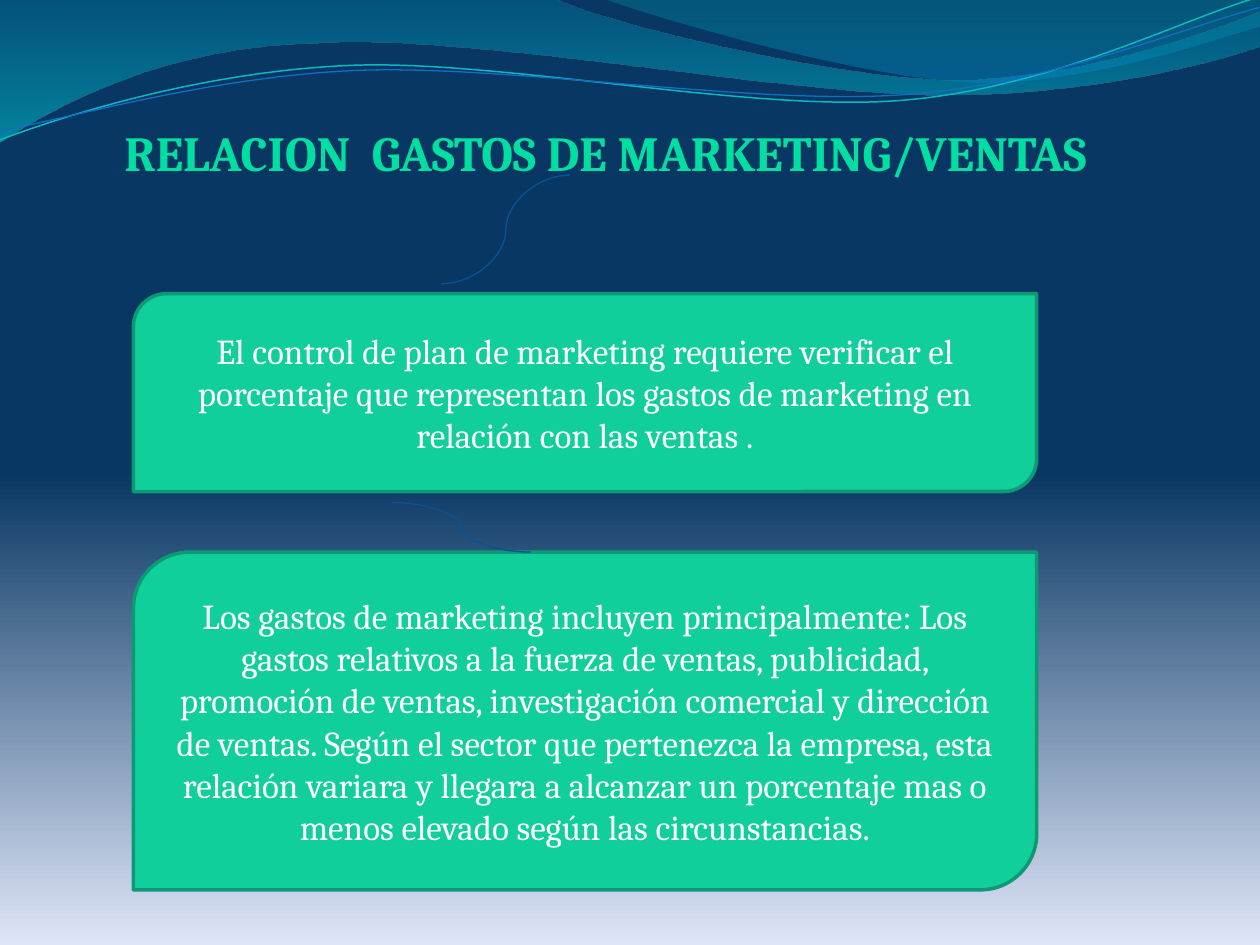
from dataclasses import dataclass

from lxml import etree
from pptx import Presentation
from pptx.dml.color import RGBColor
from pptx.enum.shapes import MSO_CONNECTOR, MSO_SHAPE
from pptx.enum.text import MSO_ANCHOR, MSO_AUTO_SIZE, PP_ALIGN
from pptx.oxml.ns import qn
from pptx.util import Cm, Pt

CURVE = MSO_CONNECTOR.CURVE
DIAGONAL_CARD = MSO_SHAPE.ROUND_2_DIAG_RECTANGLE
CENTER = PP_ALIGN.CENTER
MIDDLE = MSO_ANCHOR.MIDDLE
FIT_SHAPE = MSO_AUTO_SIZE.SHAPE_TO_FIT_TEXT


@dataclass(frozen=True)
class Theme:
    font: str = "Cambria"
    title_size: float = 28
    body_size: float = 20
    title: str = "00DFA2"
    body: str = "FFFFFF"
    card: str = "10CF9B"
    card_edge: str = "0C9973"
    link: str = "095295"
    backdrop: tuple = ((50, "083763", 100), (100, "DEE5F8", 100))
    wide_band: tuple = ((0, "0074A1", 45), (100, "00C6CF", 55))
    corner_band: tuple = ((0, "00A1A9", 30), (80, "008BBF", 45))
    upper_strand: str = "0AB8BF"
    lower_strand: str = "0F6FC6"


THEME = Theme()

WIDE_BAND = [
    [(0, 0)],
    [(11.18, -0.03)],
    [(12.09, 0.43), (16.87, 1.6), (19.25, 1.6)],
    [(21.67, 1.6), (24.33, 0.66), (25.4, 0.23)],
    [(25.43, 0.91)],
    [(24.97, 1.12), (22.1, 1.93), (18.95, 1.91)],
    [(15.8, 1.91), (9.7, 0.71), (6.53, 0.86)],
    [(3.28, 0.91), (1.17, 2.11), (-0.03, 2.87)],
]
CORNER_BAND = [
    [(12.17, -0.03)],
    [(12.93, 0.28), (17.32, 1.57), (19.53, 1.65)],
    [(21.74, 1.75), (24.41, 0.81), (25.4, 0.53)],
    [(25.4, 0)],
]
UPPER_STRAND = [
    [(0, 2.82)],
    [(1.22, 2.36), (4.01, 1.45), (7.04, 1.32)],
    [(10.03, 1.19), (15.06, 2.26), (18.11, 2.03)],
    [(21.16, 1.8), (23.83, 0.38), (25.35, -0.05)],
]
LOWER_STRAND = [
    [(0, 2.64)],
    [(1.19, 2.44), (4.17, 1.55), (7.19, 1.42)],
    [(10.24, 1.3), (15.16, 2.13), (18.21, 1.91)],
    [(21.23, 1.7), (23.9, 0.53), (25.4, 0.15)],
]

CARDS = [
    (5.92, 3.99, "El control de plan de marketing requiere verificar el porcentaje "
     "que representan los gastos de marketing en relación con las ventas ."),
    (11.13, 6.81, "Los gastos de marketing incluyen principalmente: Los gastos "
     "relativos a la fuerza de ventas, publicidad, promoción de ventas, "
     "investigación comercial y dirección de ventas. Según el sector que pertenezca "
     "la empresa, esta relación variara y llegara a alcanzar un porcentaje mas o "
     "menos elevado según las circunstancias."),
]
LINKS = [((11.5, 3.53), (8.9, 5.72)), ((7.9, 10.13), (10.7, 11.13))]


def fill_down(fill, element, stops):
    fill.gradient()
    fill.gradient_angle = 270
    for stop, (position, color, opacity) in zip(fill.gradient_stops, stops):
        stop.position = position / 100
        stop.color.rgb = RGBColor.from_string(color)
    for node, (_, _, opacity) in zip(element.iter(qn("a:srgbClr")), stops):
        if opacity < 100:
            etree.SubElement(node, qn("a:alpha"), val=str(opacity * 1000))


def set_line(line, color, width):
    line.color.rgb = RGBColor.from_string(color)
    line.width = Pt(width)


def add_outline(page, left, top, segments, close):
    points = [(Cm(left + x), Cm(top + y)) for segment in segments for x, y in segment]
    builder = page.shapes.build_freeform(*points[0], scale=1.0)
    builder.add_line_segments(points[1:], close=close)
    shape = builder.convert_to_shape()
    shape.shadow.inherit = False
    steps = iter(list(shape.element.iter(qn("a:lnTo"))))
    for segment in segments[1:]:
        first, *others = [next(steps) for _ in segment]
        if others:
            first.tag = qn("a:cubicBezTo")
            for step in others:
                first.append(step[0])
                step.getparent().remove(step)
    return shape


def add_waves(page, left, top):
    for segments, stops in ((WIDE_BAND, THEME.wide_band), (CORNER_BAND, THEME.corner_band)):
        band = add_outline(page, left, top, segments, True)
        fill_down(band.fill, band.element, stops)
        band.line.fill.background()
    for segments, color, width in (
        (UPPER_STRAND, THEME.upper_strand, 0.85),
        (LOWER_STRAND, THEME.lower_strand, 0.75),
    ):
        strand = add_outline(page, left, top, segments, False)
        strand.fill.background()
        set_line(strand.line, color, width)


def add_text(frame, text, size, color, bold=False):
    para = frame.paragraphs[0]
    para.alignment = CENTER
    span = para.add_run()
    span.text = text
    span.font.name = THEME.font
    span.font.size = Pt(size)
    span.font.bold = bold
    span.font.color.rgb = RGBColor.from_string(color)


def add_title(page, left, top, width, height):
    box = page.shapes.add_textbox(Cm(left), Cm(top), Cm(width), Cm(height))
    box.text_frame.word_wrap = False
    box.text_frame.auto_size = FIT_SHAPE
    add_text(box.text_frame, "RELACION  GASTOS DE MARKETING/VENTAS",
             THEME.title_size, THEME.title, True)


def add_card(page, left, top, width, height, text):
    card = page.shapes.add_shape(DIAGONAL_CARD, Cm(left), Cm(top), Cm(width), Cm(height))
    card.shadow.inherit = False
    card.fill.solid()
    card.fill.fore_color.rgb = RGBColor.from_string(THEME.card)
    set_line(card.line, THEME.card_edge, 2)
    card.text_frame.word_wrap = True
    card.text_frame.vertical_anchor = MIDDLE
    add_text(card.text_frame, text, THEME.body_size, THEME.body)


def add_link(page, start, end):
    link = page.shapes.add_connector(CURVE, *(Cm(value) for value in start + end))
    set_line(link.line, THEME.link, 0.75)
    etree.SubElement(link.element.spPr, qn("a:effectLst"))


def main():
    deck = Presentation()
    deck.slide_width, deck.slide_height = Cm(25.4), Cm(19.05)
    page = deck.slides.add_slide(deck.slide_layouts[6])
    fill_down(page.background.fill, page.element, THEME.backdrop)
    add_waves(page, 0, 0)
    add_title(page, 1.09, 2.34, 22.23, 1.45)
    for top, height, text in CARDS:
        add_card(page, 2.69, top, 18.21, height, text)
    for start, end in LINKS:
        add_link(page, start, end)
    deck.save("out.pptx")


if __name__ == "__main__":
    main()
